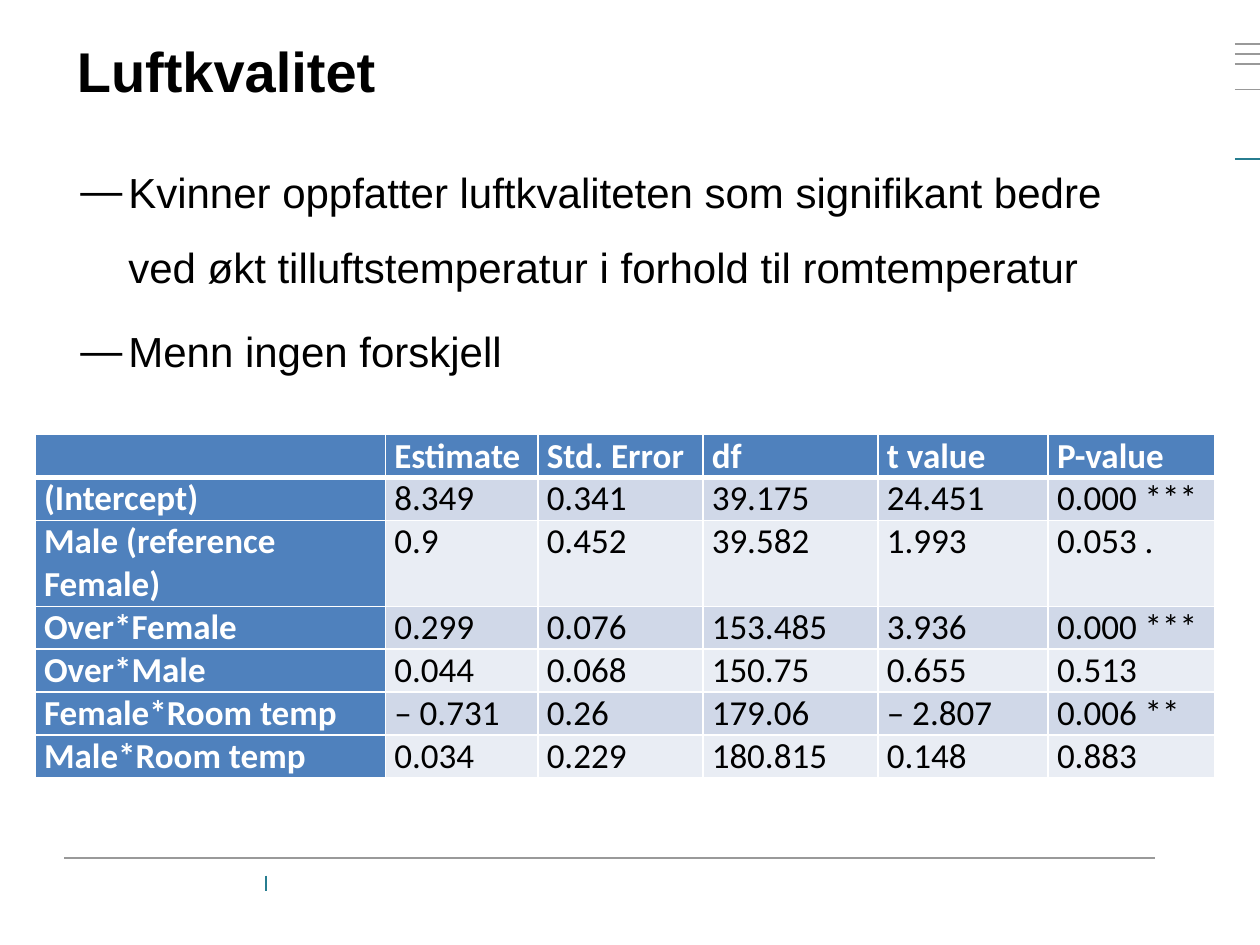
"""Build the Luftkvalitet slide with two findings and a regression table."""
from lxml import etree
from pptx import Presentation
from pptx.dml.color import RGBColor
from pptx.enum.shapes import MSO_CONNECTOR
from pptx.enum.text import MSO_ANCHOR, PP_ALIGN
from pptx.oxml.ns import qn
from pptx.util import Inches, Pt

STRAIGHT = MSO_CONNECTOR.STRAIGHT
TOP = MSO_ANCHOR.TOP
LEFT = PP_ALIGN.LEFT

THEME = {
    "text": "000000", "light": "FFFFFF", "head": "4F81BD",
    "bands": ("D0D8E8", "E9EDF4"), "rule": "999999", "accent": "277D90",
    "font": "Arial", "table_font": "Calibri",
    "title_size": 32, "body_size": 24, "table_size": 20,
}

TITLE = "Luftkvalitet"
FINDINGS = [
    "Kvinner oppfatter luftkvaliteten som signifikant bedre ved økt "
    "tilluftstemperatur i forhold til romtemperatur",
    "Menn ingen forskjell",
]
TABLE_ROWS = [
    ("", "Estimate", "Std. Error", "df", "t value", "P-value"),
    ("(Intercept)", "8.349", "0.341", "39.175", "24.451", "0.000 ***"),
    ("Male (reference Female)", "0.9", "0.452", "39.582", "1.993", "0.053 ."),
    ("Over*Female", "0.299", "0.076", "153.485", "3.936", "0.000 ***"),
    ("Over*Male", "0.044", "0.068", "150.75", "0.655", "0.513"),
    ("Female*Room temp", "– 0.731", "0.26", "179.06", "– 2.807", "0.006 **"),
    ("Male*Room temp", "0.034", "0.229", "180.815", "0.148", "0.883"),
]
COLUMN_WIDTHS = (2.78, 1.21, 1.31, 1.39, 1.35, 1.32)
ROW_HEIGHT = 0.34
TWO_LINE_ROW = 2

EDGE_TICKS = [(y, "rule") for y in (0.35, 0.43, 0.51, 0.71)] + [(1.26, "accent")]
RULES = [(0.51, 6.81, 9.17, 6.81, "rule"), (2.11, 6.95, 2.11, 7.07, "accent")]
RULES += [(9.8, y, 10, y, color) for y, color in EDGE_TICKS]


def color_of(code):
    return RGBColor.from_string(code)


def style_font(font, name, size, color, bold=False):
    font.name, font.size, font.bold = name, Pt(size), bold
    font.color.rgb = color_of(color)


def add_rule(page, x1, y1, x2, y2, color):
    rule = page.shapes.add_connector(
        STRAIGHT, Inches(x1), Inches(y1), Inches(x2), Inches(y2))
    rule.line.color.rgb = color_of(THEME[color])
    rule.line.width = Pt(1)
    etree.SubElement(rule.element.spPr, qn("a:effectLst"))


def add_title(page):
    title = page.shapes.title
    title.left, title.top = Inches(0.51), Inches(0.24)
    title.width, title.height = Inches(8.66), Inches(1.02)
    frame = title.text_frame
    frame.text = TITLE
    frame.vertical_anchor = TOP
    para = frame.paragraphs[0]
    para.alignment = LEFT
    style_font(para.runs[0].font, THEME["font"], THEME["title_size"], THEME["text"], True)


def add_findings(page):
    box = page.shapes.add_textbox(Inches(0.54), Inches(1.07), Inches(8.66), Inches(5.35))
    frame = box.text_frame
    frame.word_wrap = True
    frame.text = "\n".join(FINDINGS)
    for index, para in enumerate(frame.paragraphs):
        para.line_spacing = 1.5
        para.space_before = Pt(0.2 * THEME["body_size"] if index else 0)
        properties = para._p.get_or_add_pPr()
        properties.set("marL", str(Inches(0.38)))
        properties.set("indent", str(-Inches(0.38)))
        etree.SubElement(properties, qn("a:buFont"), typeface=THEME["font"])
        etree.SubElement(properties, qn("a:buChar"), char="—")
        style_font(para.runs[0].font, THEME["font"], THEME["body_size"], THEME["text"])


def set_borders(cell, bottom_width):
    properties = cell._tc.get_or_add_tcPr()
    widths = {"lnL": 1, "lnR": 1, "lnT": 1, "lnB": bottom_width}
    for position, (side, width) in enumerate(widths.items()):
        border = etree.Element(qn("a:" + side), w=str(Pt(width)))
        fill = etree.SubElement(border, qn("a:solidFill"))
        etree.SubElement(fill, qn("a:srgbClr"), val=THEME["light"])
        properties.insert(position, border)


def fill_cell(cell, text, row, column):
    heading = row == 0 or column == 0
    cell.fill.solid()
    cell.fill.fore_color.rgb = color_of(
        THEME["head"] if heading else THEME["bands"][(row - 1) % 2])
    set_borders(cell, 1 if row else 3)
    cell.margin_left = cell.margin_right = Inches(0.07)
    cell.margin_top = cell.margin_bottom = 0
    cell.vertical_anchor = TOP
    cell.text_frame.text = text
    for span in cell.text_frame.paragraphs[0].runs:
        style_font(span.font, THEME["table_font"], THEME["table_size"],
                   THEME["light"] if heading else THEME["text"], heading)


def add_results(page):
    heights = [ROW_HEIGHT * (2 if row == TWO_LINE_ROW else 1)
               for row in range(len(TABLE_ROWS))]
    table = page.shapes.add_table(
        len(TABLE_ROWS), len(COLUMN_WIDTHS), Inches(0.28), Inches(3.45),
        Inches(sum(COLUMN_WIDTHS)), Inches(sum(heights))).table
    table.first_col = True
    for column, width in zip(table.columns, COLUMN_WIDTHS):
        column.width = Inches(width)
    for row, (values, height) in enumerate(zip(TABLE_ROWS, heights)):
        table.rows[row].height = Inches(height)
        for column, text in enumerate(values):
            fill_cell(table.cell(row, column), text, row, column)


def main():
    deck = Presentation()
    deck.slide_width, deck.slide_height = Inches(10), Inches(7.5)
    page = deck.slides.add_slide(deck.slide_layouts[5])
    for rule in RULES:
        add_rule(page, *rule)
    add_title(page)
    add_results(page)
    add_findings(page)
    deck.save("out.pptx")


if __name__ == "__main__":
    main()
